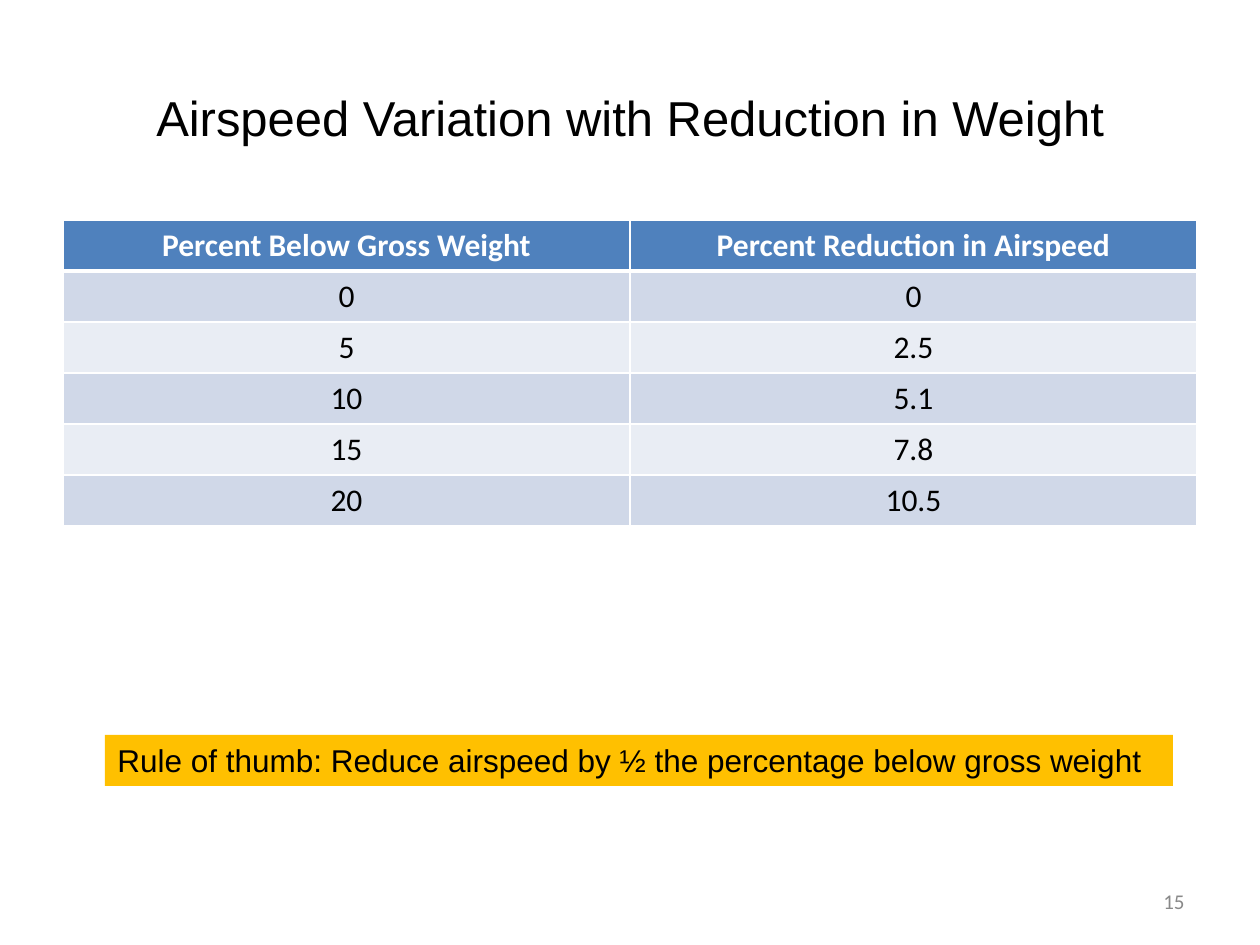
from lxml.etree import SubElement
from pptx import Presentation
from pptx.dml.color import RGBColor
from pptx.enum.shapes import MSO_SHAPE
from pptx.enum.text import MSO_ANCHOR, MSO_AUTO_SIZE, PP_ALIGN
from pptx.oxml.ns import qn
from pptx.util import Emu, Pt

COLORS = {
    "black": "000000",
    "white": "FFFFFF",
    "header": "4F81BD",
    "odd_row": "D0D8E8",
    "even_row": "E9EDF4",
    "rule": "FFC000",
    "page_number": "898989",
}
ROWS = [
    ("Percent Below Gross Weight", "Percent Reduction in Airspeed"),
    ("0", "0"),
    ("5", "2.5"),
    ("10", "5.1"),
    ("15", "7.8"),
    ("20", "10.5"),
]


def px(length):
    return Emu(round(length * 914400 / 126))


def color(name):
    return RGBColor.from_string(COLORS[name])


def write(frame, text, font, size, color_name, align, bold=False):
    frame.text = text
    paragraph = frame.paragraphs[0]
    paragraph.alignment = align
    for span in paragraph.runs:
        span.font.name = font
        span.font.size = Pt(size)
        span.font.bold = bold
        span.font.color.rgb = color(color_name)


def add_label(page, bounds, text, font, size, color_name, align):
    box = page.shapes.add_textbox(*map(px, bounds))
    box.text_frame.word_wrap = True
    box.text_frame.vertical_anchor = MSO_ANCHOR.MIDDLE
    write(box.text_frame, text, font, size, color_name, align)


def add_banner(page, bounds, text):
    banner = page.shapes.add_shape(MSO_SHAPE.RECTANGLE, *map(px, bounds))
    banner.shadow.inherit = False
    banner.fill.solid()
    banner.fill.fore_color.rgb = color("rule")
    banner.line.fill.background()
    frame = banner.text_frame
    frame.word_wrap = False
    frame.auto_size = MSO_AUTO_SIZE.SHAPE_TO_FIT_TEXT
    frame.vertical_anchor = MSO_ANCHOR.TOP
    write(frame, text, "Arial", 18, "black", PP_ALIGN.LEFT)


def set_borders(cell, top, bottom):
    properties = cell._tc.get_or_add_tcPr()
    for side, width in (("L", 1), ("R", 1), ("T", top), ("B", bottom)):
        line = SubElement(properties, qn(f"a:ln{side}"), w=str(Pt(width)))
        fill = SubElement(line, qn("a:solidFill"))
        SubElement(fill, qn("a:srgbClr"), val=COLORS["white"])


def add_airspeed_table(page, bounds):
    frame = page.shapes.add_table(len(ROWS), len(ROWS[0]), *map(px, bounds))
    for row, values in enumerate(ROWS):
        is_header = row == 0
        band = "header" if is_header else "odd_row" if row % 2 else "even_row"
        for column, value in enumerate(values):
            cell = frame.table.cell(row, column)
            set_borders(cell, 3 if row == 1 else 1, 3 if is_header else 1)
            cell.fill.solid()
            cell.fill.fore_color.rgb = color(band)
            write(cell.text_frame, value, "Calibri", 18,
                  "white" if is_header else "black", PP_ALIGN.CENTER, is_header)


def main():
    deck = Presentation()
    deck.slide_width, deck.slide_height = px(1260), px(945)
    page = deck.slides.add_slide(deck.slide_layouts[6])
    add_label(page, (63, 38, 1134, 158), "Airspeed Variation with Reduction in Weight",
              "Arial", 28, "black", PP_ALIGN.CENTER)
    add_airspeed_table(page, (63, 220, 1134, 306))
    add_banner(page, (105, 735, 1068, 51),
               "Rule of thumb: Reduce airspeed by ½ the percentage below gross weight")
    add_label(page, (903, 876, 294, 50), "15", "Calibri", 12, "page_number", PP_ALIGN.RIGHT)
    deck.save("out.pptx")


if __name__ == "__main__":
    main()
